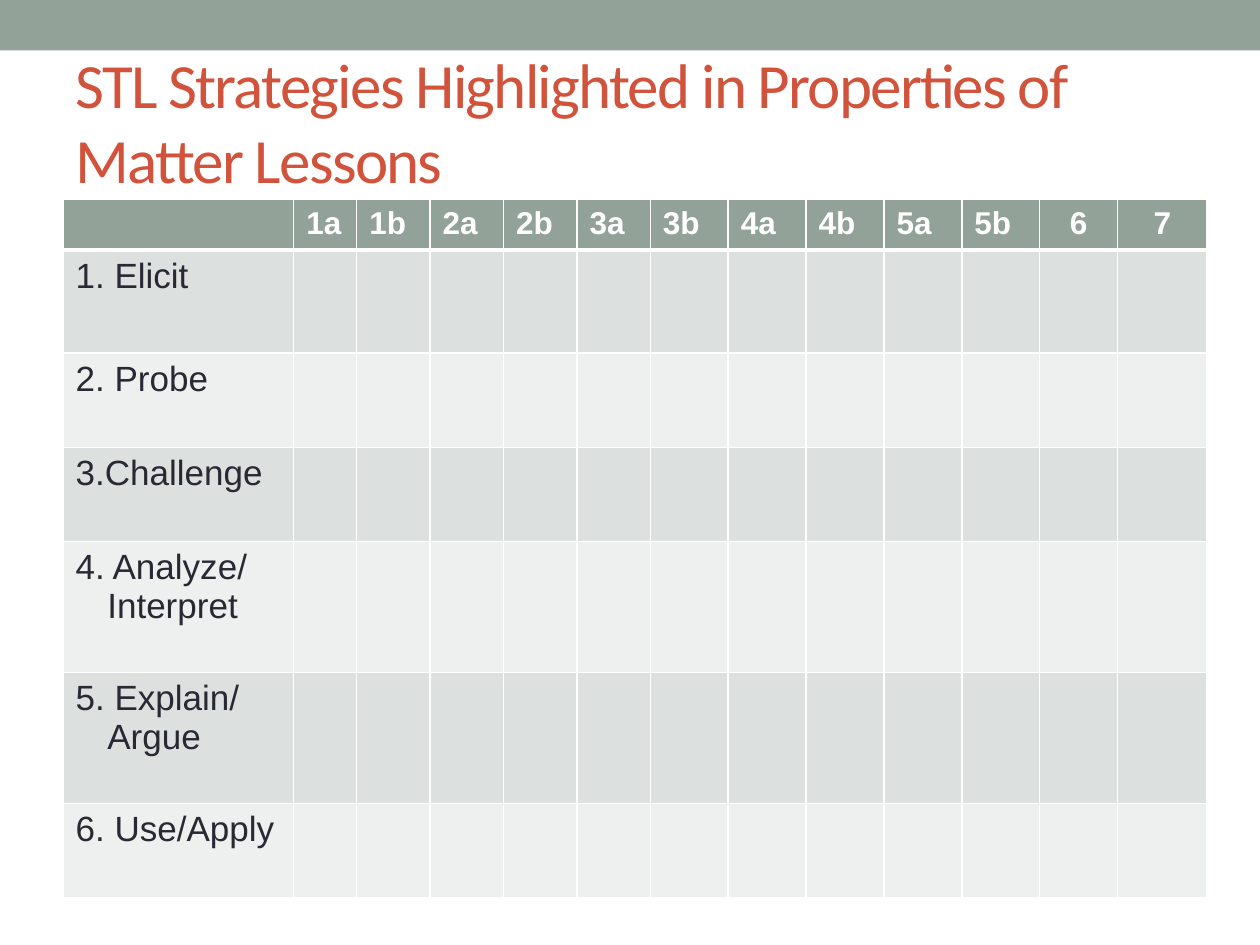
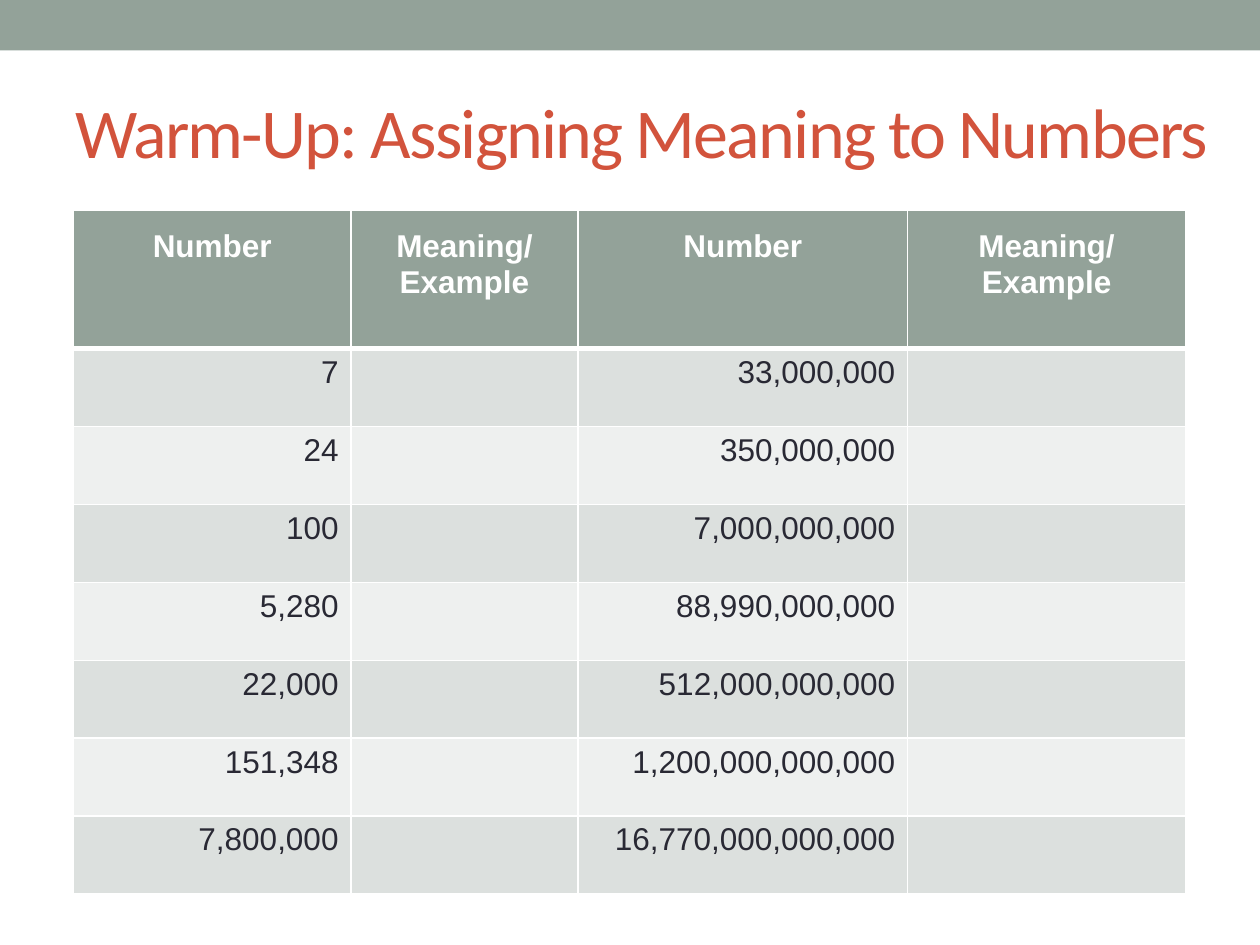
from lxml import etree
from pptx import Presentation
from pptx.dml.color import RGBColor
from pptx.enum.shapes import MSO_SHAPE as SHAPE
from pptx.enum.text import MSO_ANCHOR as ANCHOR, PP_ALIGN as ALIGN
from pptx.oxml import parse_xml
from pptx.oxml.ns import nsdecls
from pptx.util import Cm, Pt

SAGE = RGBColor(0x93, 0xA2, 0x99)
RUST = RGBColor(0xD2, 0x53, 0x3C)
INK = RGBColor(0x29, 0x29, 0x34)
WHITE = RGBColor(0xFF, 0xFF, 0xFF)
BANDS = [RGBColor(0xDC, 0xE0, 0xDE), RGBColor(0xEE, 0xF0, 0xEF)]

TITLE_FONT = {"name": "Calibri", "bold": False}
HEAD_FONT = {"name": "Arial", "bold": True, "size": Pt(18)}
BODY_FONT = {"name": "Arial", "bold": False}

lessons = ["1a", "1b", "2a", "2b", "3a", "3b", "4a", "4b", "5a", "5b", "6", "7"]
strategies = ["1. Elicit", "2. Probe", "3.Challenge", "4. Analyze/ Interpret",
              "5. Explain/ Argue", "6. Use/Apply"]
numbers = [("7", "33,000,000"), ("24", "350,000,000"), ("100", "7,000,000,000"),
           ("5,280", "88,990,000,000"), ("22,000", "512,000,000,000"),
           ("151,348", "1,200,000,000,000"), ("7,800,000", "16,770,000,000,000")]

# Lengths in centimetres, text sizes in points
slides = [
    {"title": "STL Strategies Highlighted in Properties of Matter Lessons",
     "title_box": (1.27, 1.07, 23.72, 2.74), "title_size": 36,
     "corner": (1.27, 4.02),
     "cols": [4.65, 1.27] + [1.48] * 4 + [1.57] * 6 + [1.8],
     "rows": [0.89, 2.08, 1.9, 1.9, 2.64, 2.64, 1.9],
     "cells": [[""] + lessons] + [[s] + [""] * len(lessons) for s in strategies],
     "head_align": [ALIGN.LEFT] * 11 + [ALIGN.CENTER] * 2, "head_top": 0.13,
     "body_align": ALIGN.LEFT, "body_size": 20, "hanging": 0.64},
    {"title": "Warm-Up: Assigning Meaning to Numbers",
     "title_box": (1.27, 1.27, 23.5, 2.74), "title_size": 40,
     "corner": (1.48, 4.24),
     "cols": [5.6, 4.57, 6.65, 5.6],
     "rows": [2.79] + [1.57] * len(numbers),
     "cells": [["Number", "Meaning/\vExample"] * 2]
              + [[small, "", large, ""] for small, large in numbers],
     "head_align": [ALIGN.CENTER] * 4, "head_top": 0.38,
     "body_align": ALIGN.RIGHT, "body_size": 18, "hanging": 0},
]


def style_font(font, color, values):
    for name, value in values.items():
        setattr(font, name, value)
    font.color.rgb = color


def add_borders(cell, **widths):
    """Draw white cell borders; widths are points by side (L, R, T, B)."""
    tc_pr = cell._tc.get_or_add_tcPr()
    for side, width in widths.items():
        tc_pr.append(parse_xml(
            f'<a:ln{side} {nsdecls("a")} w="{Pt(width)}"><a:solidFill>'
            f'<a:srgbClr val="{WHITE}"/></a:solidFill></a:ln{side}>'))


prs = Presentation()
prs.slide_width, prs.slide_height = Cm(25.4), Cm(19.05)

for page in slides:
    s = prs.slides.add_slide(prs.slide_layouts[6])

    band = s.shapes.add_shape(SHAPE.RECTANGLE, 0, 0, prs.slide_width, Cm(1.02))
    band.shadow.inherit = False
    band.fill.solid()
    band.fill.fore_color.rgb = SAGE
    band.line.fill.background()

    sp = s.shapes.add_textbox(*map(Cm, page["title_box"]))
    tf = sp.text_frame
    tf.word_wrap = True
    tf.vertical_anchor = ANCHOR.MIDDLE
    r = tf.paragraphs[0].add_run()
    r.text = page["title"]
    style_font(r.font, RUST, TITLE_FONT | {"size": Pt(page["title_size"])})
    r.font._element.set("spc", "-100")

    cols, rows = page["cols"], page["rows"]
    table = s.shapes.add_table(len(rows), len(cols), *map(Cm, page["corner"]),
                               Cm(sum(cols)), Cm(sum(rows))).table
    for col, width in zip(table.columns, cols):
        col.width = Cm(width)
    for row, height in zip(table.rows, rows):
        row.height = Cm(height)

    for i, texts in enumerate(page["cells"]):
        head = i == 0
        for j, text in enumerate(texts):
            cell = table.cell(i, j)
            add_borders(cell, L=1, R=1, T=3 if i == 1 else 1, B=3 if head else 1)
            cell.fill.solid()
            cell.fill.fore_color.rgb = SAGE if head else BANDS[(i - 1) % 2]
            if not text:
                continue
            cell.text = text
            p = cell.text_frame.paragraphs[0]
            if head:
                cell.margin_top = Cm(page["head_top"])
                p.alignment = page["head_align"][j]
            else:
                p.alignment = page["body_align"]
                if page["hanging"]:
                    p_pr = p._p.get_or_add_pPr()
                    p_pr.set("marL", str(Cm(page["hanging"])))
                    p_pr.set("indent", str(-Cm(page["hanging"])))
                    p.space_after = Pt(12 if i == 1 else 6)
            body_font = BODY_FONT | {"size": Pt(page["body_size"])}
            for r in p.runs:
                style_font(r.font, WHITE if head else INK,
                           HEAD_FONT if head else body_font)

prs.save("out.pptx")
